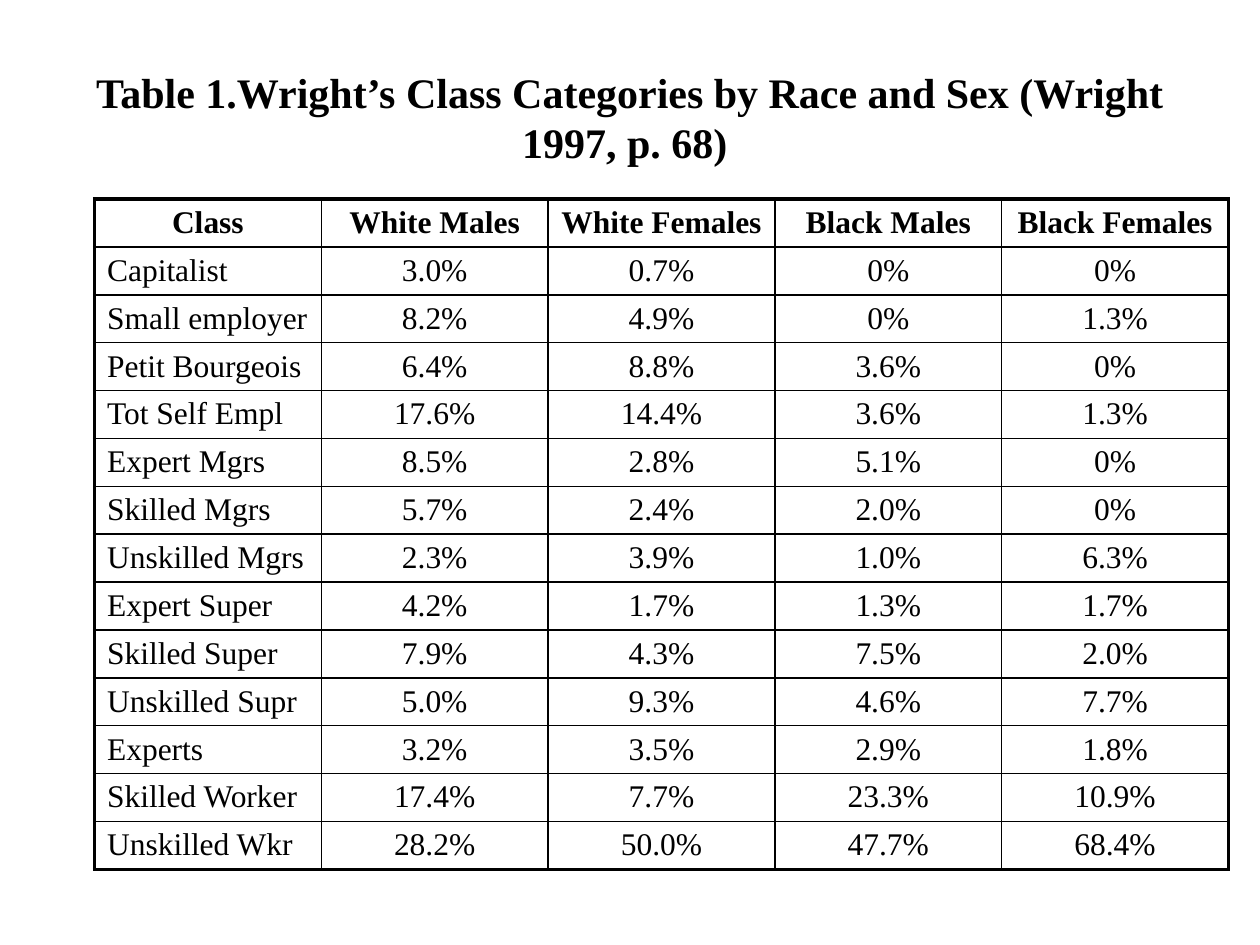
import pptx
import pptx.dml.color
import pptx.enum.text
import pptx.oxml.ns
import pptx.util
from lxml import etree

PX = 9144
COLORS = {"ink": "000000", "paper": "FFFFFF"}
FONT = "Times New Roman"
CENTER = pptx.enum.text.PP_ALIGN.CENTER
LEFT = pptx.enum.text.PP_ALIGN.LEFT
MIDDLE = pptx.enum.text.MSO_ANCHOR.MIDDLE

HEADERS = ["Class", "White Males", "White Females", "Black Males", "Black Females"]
CLASSES = [
    ["Capitalist", "3.0%", "0.7%", "0%", "0%"],
    ["Small employer", "8.2%", "4.9%", "0%", "1.3%"],
    ["Petit Bourgeois", "6.4%", "8.8%", "3.6%", "0%"],
    ["Tot Self Empl", "17.6%", "14.4%", "3.6%", "1.3%"],
    ["Expert Mgrs", "8.5%", "2.8%", "5.1%", "0%"],
    ["Skilled Mgrs", "5.7%", "2.4%", "2.0%", "0%"],
    ["Unskilled Mgrs", "2.3%", "3.9%", "1.0%", "6.3%"],
    ["Expert Super", "4.2%", "1.7%", "1.3%", "1.7%"],
    ["Skilled Super", "7.9%", "4.3%", "7.5%", "2.0%"],
    ["Unskilled Supr", "5.0%", "9.3%", "4.6%", "7.7%"],
    ["Experts", "3.2%", "3.5%", "2.9%", "1.8%"],
    ["Skilled Worker", "17.4%", "7.7%", "23.3%", "10.9%"],
    ["Unskilled Wkr", "28.2%", "50.0%", "47.7%", "68.4%"],
]


def rgb(name):
    return pptx.dml.color.RGBColor.from_string(COLORS[name])


class Deck:
    def __init__(self, width, height):
        self.prs = pptx.Presentation()
        self.prs.slide_width = width * PX
        self.prs.slide_height = height * PX
        self.s = self.prs.slides.add_slide(self.prs.slide_layouts[5])

    def format(self, tf, size, bold, align):
        for p in tf.paragraphs:
            p.alignment = align
            for r in p.runs:
                r.font.name = FONT
                r.font.size = pptx.util.Pt(size)
                r.font.bold = bold
                r.font.color.rgb = rgb("ink")

    def title(self, text, x, y, w, h, size):
        sp = self.s.shapes.title
        sp.left, sp.top, sp.width, sp.height = [v * PX for v in (x, y, w, h)]
        tf = sp.text_frame
        tf.text = text
        tf.word_wrap = True
        tf.auto_size = pptx.enum.text.MSO_AUTO_SIZE.NONE
        tf.vertical_anchor = MIDDLE
        self.format(tf, size, True, CENTER)

    def borders(self, cell, outer):
        tcPr = cell._tc.get_or_add_tcPr()
        for i, side in enumerate(("L", "R", "T", "B")):
            width = pptx.util.Pt(2.25 if side in outer else 1)
            ln = etree.Element(pptx.oxml.ns.qn(f"a:ln{side}"), w=str(width))
            fill = etree.SubElement(ln, pptx.oxml.ns.qn("a:solidFill"))
            etree.SubElement(fill, pptx.oxml.ns.qn("a:srgbClr"), val=COLORS["ink"])
            tcPr.insert(i, ln)

    def table(self, rows, x, y, col_w, row_h, size):
        n_rows, n_cols = len(rows), len(rows[0])
        frame = self.s.shapes.add_table(
            n_rows, n_cols, x * PX, y * PX, n_cols * col_w * PX, n_rows * row_h * PX)
        tbl = frame.table
        tbl.horz_banding = False
        for col in tbl.columns:
            col.width = col_w * PX
        for i, row in enumerate(rows):
            tbl.rows[i].height = row_h * PX
            for j, text in enumerate(row):
                cell = tbl.cell(i, j)
                cell.text_frame.text = text
                cell.margin_top, cell.margin_bottom = 5 * PX, 4 * PX
                cell.fill.solid()
                cell.fill.fore_color.rgb = rgb("paper")
                align = LEFT if i > 0 and j == 0 else CENTER
                self.format(cell.text_frame, size, i == 0, align)
                edges = {"L": j == 0, "R": j == n_cols - 1,
                         "T": i == 0, "B": i == n_rows - 1}
                self.borders(cell, [side for side, on in edges.items() if on])


def main():
    deck = Deck(1000, 750)
    deck.title("Table 1.Wright’s Class Categories by Race and Sex (Wright 1997, p. 68) ",
               50, 30, 900, 125, 24)
    deck.table([HEADERS] + CLASSES, 75, 158, 180, 38, 18)
    deck.prs.save("out.pptx")


if __name__ == "__main__":
    main()
